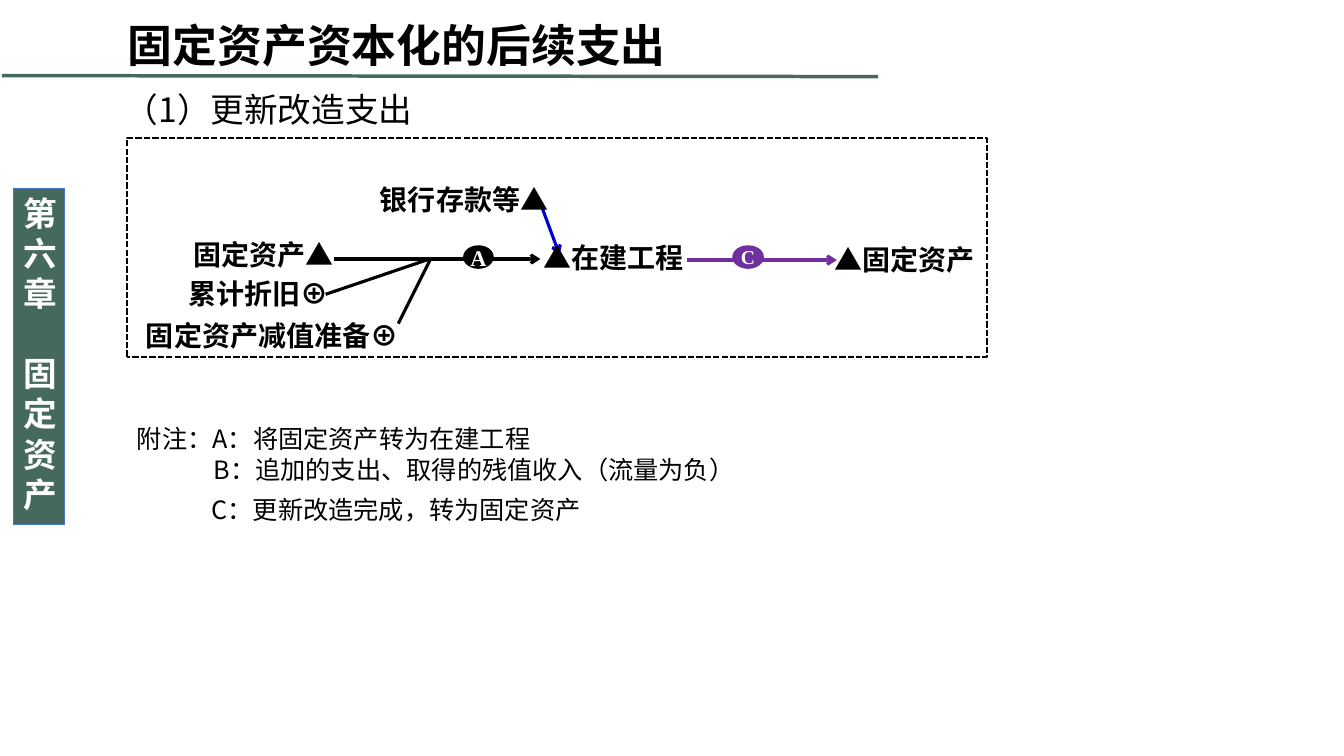
from lxml import etree
from pptx import Presentation
from pptx.dml.color import RGBColor
from pptx.enum.dml import MSO_LINE
from pptx.enum.shapes import MSO_CONNECTOR, MSO_SHAPE
from pptx.enum.text import MSO_ANCHOR, PP_ALIGN
from pptx.oxml.ns import qn
from pptx.util import Inches, Pt

STRAIGHT = MSO_CONNECTOR.STRAIGHT
RECTANGLE, PARALLELOGRAM = MSO_SHAPE.RECTANGLE, MSO_SHAPE.PARALLELOGRAM
NODE = MSO_SHAPE.FLOWCHART_CONNECTOR
DASH = MSO_LINE.SQUARE_DOT
MIDDLE, TOP = MSO_ANCHOR.MIDDLE, MSO_ANCHOR.TOP
CENTER, LEFT = PP_ALIGN.CENTER, PP_ALIGN.LEFT

COLORS = {"green": "45695D", "blue_edge": "4874CB", "black": "000000",
          "white": "FFFFFF", "blue": "0000CC", "purple": "7030A0"}
CJK, SERIF = "Noto Sans CJK SC", "Times New Roman"

# text, (left, top, width, height), size, bold
HEADINGS = [
    ("固定资产资本化的后续支出", (1.17, 0.13, 7.14, 0.64), 32, True),
    ("（1）更新改造支出", (1.14, 0.88, 11.5, 0.52), 24, False),
]
# text, left, top, width
ACCOUNTS = [
    ("银行存款等▲", 3.67, 1.76, 2.13),
    ("固定资产▲", 1.82, 2.31, 1.65),
    ("累计折旧⊕", 1.77, 2.69, 1.95),
    ("固定资产减值准备⊕", 1.35, 3.11, 2.76),
    ("▲在建工程", 5.29, 2.34, 1.92),
    ("▲固定资产", 8.18, 2.36, 1.7),
]
NOTES = [
    ("附注：A：将固定资产转为在建工程", 1.26, 4.15, 4.33),
    ("B：追加的支出、取得的残值收入（流量为负）", 2.02, 4.46, 5.51),
    ("C：更新改造完成，转为固定资产", 2, 4.86, 4.25),
]
# from, to, colour, arrow
FLOWS = [
    ((3.31, 2.57), (5.36, 2.57), "black", True),
    ((3.23, 2.92), (4.26, 2.57), "black", False),
    ((3.95, 3.21), (4.27, 2.57), "black", False),
    ((5.38, 2.07), (5.55, 2.53), "blue", True),
    ((6.81, 2.58), (8.3, 2.58), "purple", True),
]
# letter, left, width, colour, size
STEPS = [("A", 4.6, 0.29, "black", 16), ("C", 7.27, 0.3, "purple", 14)]
CHAPTER = ["第六章", "固定资产"]
CHAPTER_PITCH = 28.6

prs = Presentation()
prs.slide_width, prs.slide_height = Inches(13.33), Inches(7.5)
slide = prs.slides.add_slide(prs.slide_layouts[6])


def rgb(name):
    return RGBColor.from_string(COLORS[name])


def write(frame, text, size, bold=False, color="black", font=CJK, align=LEFT, anchor=TOP):
    frame.word_wrap = True
    frame.vertical_anchor = anchor
    frame.text = text
    for paragraph in frame.paragraphs:
        paragraph.alignment = align
        for run in paragraph.runs:
            run.font.size, run.font.bold, run.font.name = Pt(size), bold, font
            run.font.color.rgb = rgb(color)
            east_asian = etree.SubElement(run.font._element, qn("a:ea"))
            east_asian.set("typeface", font)


def add_label(text, box, size, bold=False):
    frame = slide.shapes.add_textbox(*map(Inches, box)).text_frame
    write(frame, text, size, bold)
    return frame


def add_box(kind, box, fill, edge=None, width=1):
    shape = slide.shapes.add_shape(kind, *map(Inches, box))
    shape.shadow.inherit = False
    shape.fill.solid()
    shape.fill.fore_color.rgb = rgb(fill)
    if edge:
        shape.line.color.rgb = rgb(edge)
        shape.line.width = Pt(width)
    else:
        shape.line.fill.background()
    return shape


def add_line(start, end, color, width=2.25, arrow=False):
    line = slide.shapes.add_connector(STRAIGHT, *map(Inches, start + end))
    line.line.color.rgb = rgb(color)
    line.line.width = Pt(width)
    properties = line._element.spPr
    if arrow:
        etree.SubElement(properties.find(qn("a:ln")), qn("a:tailEnd")).set("type", "arrow")
    etree.SubElement(properties, qn("a:effectLst"))


def main():
    add_line((0.02, 0.75), (8.71, 0.76), "green", 2.5)

    chapter = add_box(RECTANGLE, (0.13, 1.87, 0.51, 3.33), "green", "blue_edge", 0.75)
    write(chapter.text_frame, "\n".join(CHAPTER), 24, True, "white")
    for paragraph in chapter.text_frame.paragraphs:
        paragraph.line_spacing = Pt(CHAPTER_PITCH)
        for run in paragraph.runs:
            run.font._element.set("spc", "-10")
    chapter.text_frame.paragraphs[1].space_before = Pt(CHAPTER_PITCH)

    frame = add_box(PARALLELOGRAM, (1.26, 1.37, 8.53, 2.17), "white", "black", 1.5)
    frame.adjustments[0] = 0
    frame.line.dash_style = DASH

    for start, end, color, arrow in FLOWS:
        add_line(start, end, color, arrow=arrow)
    for text, left, top, width in ACCOUNTS:
        add_label(text, (left, top, width, 0.44), 20, True)
    for letter, left, width, color, size in STEPS:
        step = add_box(NODE, (left, 2.44, width, 0.22), color, color)
        inner = step.text_frame
        inner.margin_left = inner.margin_right = inner.margin_top = inner.margin_bottom = 0
        write(inner, letter, size, True, "white", SERIF, CENTER, MIDDLE)

    title, subtitle = [add_label(*heading) for heading in HEADINGS]
    subtitle.paragraphs[0].line_spacing = 0.9
    for text, left, top, width in NOTES:
        add_label(text, (left, top, width, 0.4), 18)

    prs.save("out.pptx")


if __name__ == "__main__":
    main()
